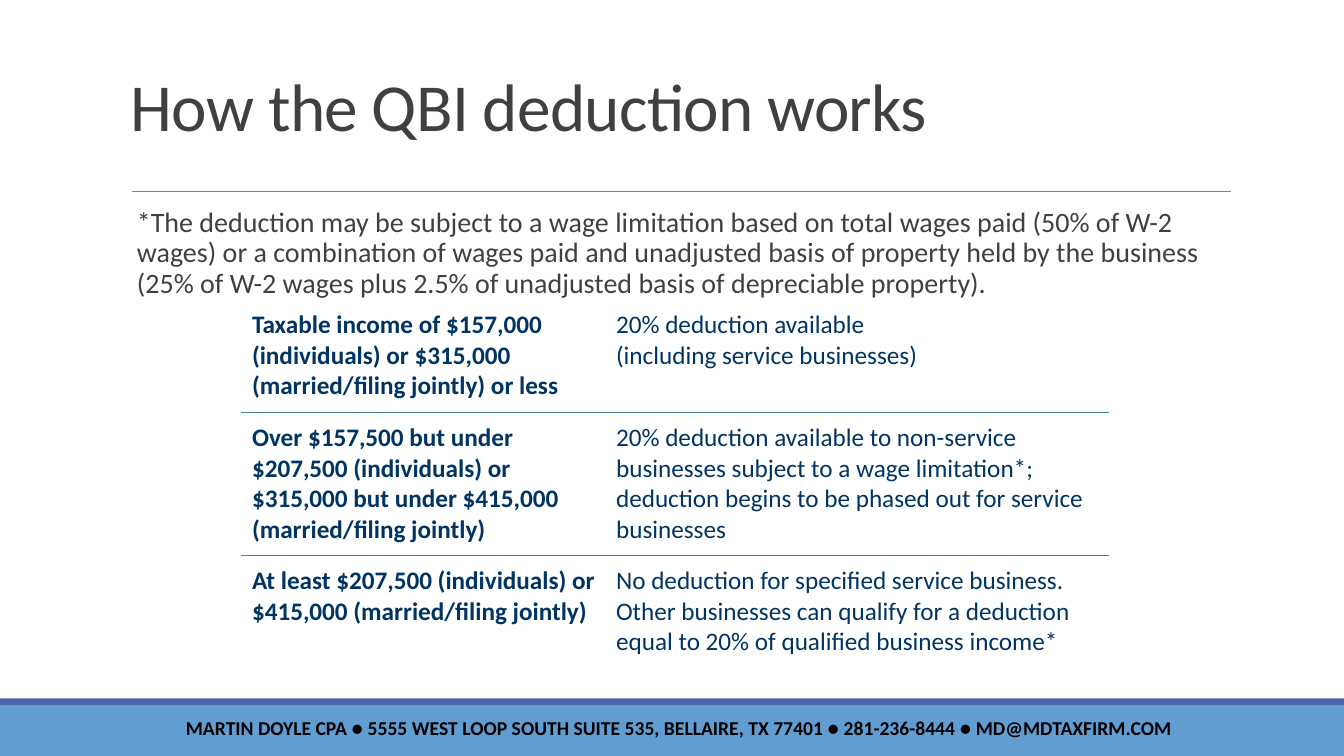
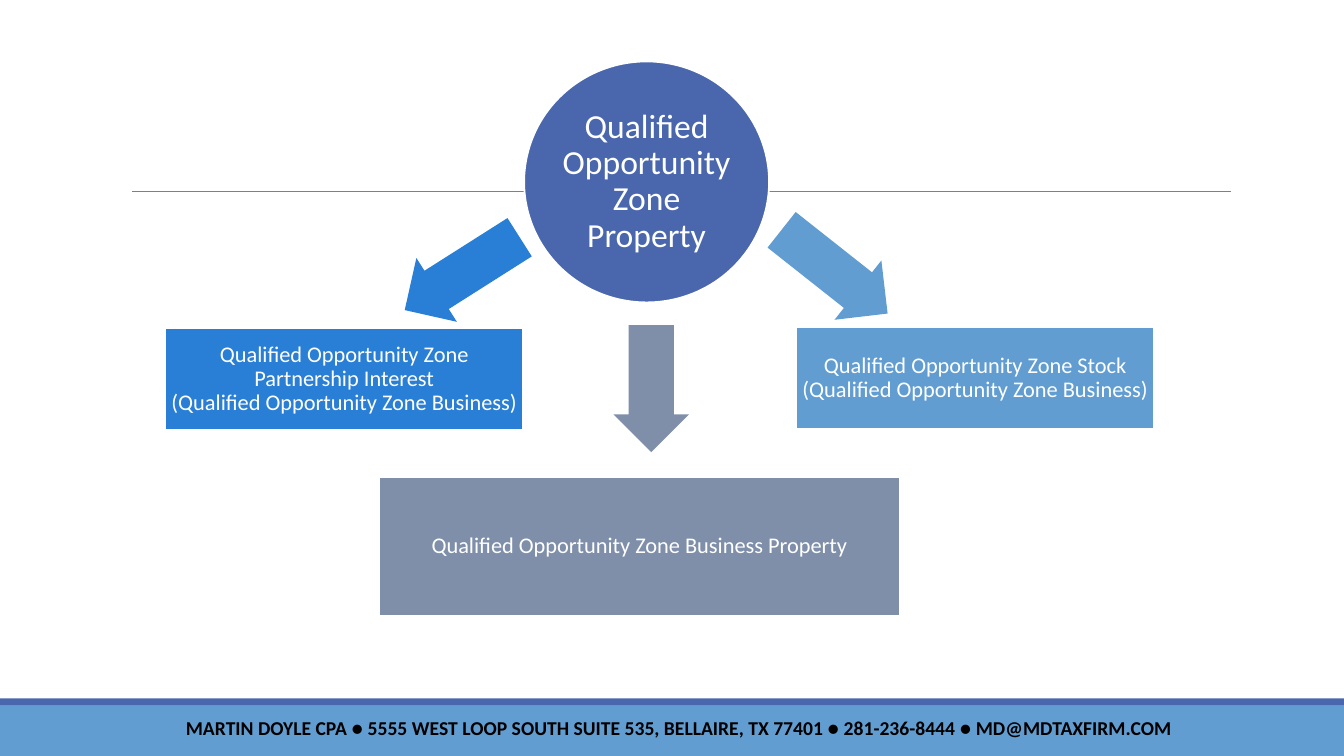
from dataclasses import dataclass

from lxml import etree
from pptx import Presentation
from pptx.dml.color import RGBColor
from pptx.enum import shapes, text
from pptx.oxml import ns
from pptx import util as u

FONT = "Calibri"
CELL = u.Inches(0.1)
COLUMNS, ROWS = 133.33, 75

WHITE = RGBColor(0xFF, 0xFF, 0xFF)
BLACK = RGBColor(0x00, 0x00, 0x00)
CHARCOAL = RGBColor(0x40, 0x40, 0x40)
GRAY = RGBColor(0x80, 0x80, 0x80)
NAVY = RGBColor(0x00, 0x34, 0x63)
TEAL = RGBColor(0x42, 0x86, 0x94)
INDIGO = RGBColor(0x4A, 0x66, 0xAC)
SKY = RGBColor(0x62, 0x9D, 0xD1)
BLUE = RGBColor(0x29, 0x7F, 0xD5)
SLATE = RGBColor(0x7F, 0x8F, 0xA9)

TITLE = "How the QBI deduction works"
NOTE = (
    "*The deduction may be subject to a wage limitation based on total wages paid "
    "(50% of W-2 wages) or a combination of wages paid and unadjusted basis of property "
    "held by the business (25% of W-2 wages plus 2.5% of unadjusted basis of depreciable property)."
)
FOOTER = (
    "MARTIN DOYLE CPA ● 5555 WEST LOOP SOUTH SUITE 535, BELLAIRE, TX 77401 "
    "● 281-236-8444 ● MD@MDTAXFIRM.COM"
)
BRACKETS = [
    (
        "Taxable income of $157,000 (individuals) or $315,000 (married/filing jointly) or less",
        "20% deduction available\n(including service businesses)",
    ),
    (
        "Over $157,500 but under $207,500 (individuals) or $315,000 but under $415,000 "
        "(married/filing jointly)",
        "20% deduction available to non-service businesses subject to a wage limitation*; "
        "deduction begins to be phased out for service businesses",
    ),
    (
        "At least $207,500 (individuals) or $415,000 (married/filing jointly)",
        "No deduction for specified service business. Other businesses can qualify for a "
        "deduction equal to 20% of qualified business income*",
    ),
]
NODES = [
    ("Qualified Opportunity Zone Stock\n(Qualified Opportunity Zone Business)",
     SKY, (62.6, 26.4, 35.5, 10.1), (59.7, 17.1, 13.4, 7.5), 218.3),
    ("Qualified Opportunity Zone Partnership Interest\n(Qualified Opportunity Zone Business)",
     BLUE, (0, 26.5, 35.5, 10.1), (22.7, 17.3, 13.5, 7.5), 327.6),
    ("Qualified Opportunity Zone Business Property",
     SLATE, (21.2, 41.2, 51.7, 13.8), (41.9, 28.7, 12.6, 7.5), 270),
]


@dataclass
class Box:
    """A rectangle measured in grid cells."""

    left: float
    top: float
    width: float
    height: float

    def inner(self, left, top, width, height):
        """Return a box placed relative to this one."""
        return Box(self.left + left, self.top + top, width, height)

    def place(self):
        """Return left, top, width and height as lengths."""
        return [u.Emu(round(side * CELL))
                for side in (self.left, self.top, self.width, self.height)]


def write(frame, words, size, color, bold=False, align=text.PP_ALIGN.LEFT,
          anchor=text.MSO_ANCHOR.TOP, inset=None, leading=None, tracking=None, indent=0):
    """Fill a text frame with one formatted paragraph for each line."""
    frame.word_wrap = True
    frame.vertical_anchor = anchor
    if inset is not None:
        frame.margin_left = frame.margin_right = u.Inches(inset)
        frame.margin_top = frame.margin_bottom = u.Inches(inset)
    for number, line in enumerate(words.split("\n")):
        para = frame.add_paragraph() if number else frame.paragraphs[0]
        para.alignment = align
        if leading:
            para.line_spacing = leading
        if indent:
            para._p.get_or_add_pPr().set("marL", str(u.Inches(indent)))
        span = para.add_run()
        span.text = line
        span.font.name = FONT
        span.font.size = u.Pt(size)
        span.font.bold = bold
        span.font.color.rgb = color
        if tracking:
            span._r.get_or_add_rPr().set("spc", str(round(tracking * 100)))


def add_text(page, box, words, **style):
    """Add a text box."""
    write(page.shapes.add_textbox(*box.place()).text_frame, words, **style)


def add_block(page, kind, box, fill, outline=None):
    """Add a flat filled shape, with an outline if a colour is given."""
    block = page.shapes.add_shape(kind, *box.place())
    block.shadow.inherit = False
    block.fill.solid()
    block.fill.fore_color.rgb = fill
    if outline is None:
        block.line.fill.background()
    else:
        block.line.color.rgb = outline
        block.line.width = u.Pt(1.25)
    return block


def add_rule(page, box):
    """Draw a thin horizontal rule along the top of the box."""
    left, top, width, _ = box.place()
    rule = page.shapes.add_connector(shapes.MSO_CONNECTOR.STRAIGHT, left, top, left + width, top)
    rule.line.color.rgb = GRAY
    rule.line.width = u.Pt(0.5)
    etree.SubElement(rule._element.spPr, ns.qn("a:effectLst"))


def add_footer(page, box):
    """Draw the contact band with its stripe."""
    rectangle = shapes.MSO_SHAPE.RECTANGLE
    add_block(page, rectangle, box.inner(0, 0.7, box.width, box.height - 0.7), SKY)
    add_block(page, rectangle, box.inner(0, 0, box.width, 0.7), INDIGO)
    add_text(page, box.inner(9.2, 0.5, 116.4, 4.7), FOOTER, size=14, color=BLACK, bold=True,
             align=text.PP_ALIGN.CENTER, anchor=text.MSO_ANCHOR.MIDDLE)


def add_page(deck):
    """Add a blank page with the shared rule and footer."""
    page = deck.slides.add_slide(deck.slide_layouts[6])
    add_rule(page, Box(13.1, 19, 109, 0))
    add_footer(page, Box(0, 69.3, COLUMNS, 5.7))
    return page


def add_border(cell, side):
    """Draw a teal line on one side of a cell."""
    border = etree.Element(ns.qn("a:" + side), w=str(u.Pt(1)))
    fill = etree.SubElement(border, ns.qn("a:solidFill"))
    etree.SubElement(fill, ns.qn("a:srgbClr"), val=str(TEAL))
    properties = cell._tc.get_or_add_tcPr()
    position = sum(child.tag.startswith(ns.qn("a:ln")) for child in properties)
    properties.insert(position, border)


def add_brackets(page, box):
    """Add the table of income brackets and deductions."""
    table = page.shapes.add_table(len(BRACKETS), 2, *box.place()).table
    table.first_row = table.horz_banding = False
    for column, share in zip(table.columns, (0.42, 0.58)):
        column.width = u.Emu(round(box.width * share * CELL))
    for row, height in zip(table.rows, (11.2, 14.2, 11.2)):
        row.height = u.Emu(round(height * CELL))
    for row, words in enumerate(BRACKETS):
        for column, entry in enumerate(words):
            cell = table.cell(row, column)
            cell.fill.background()
            cell.margin_left = cell.margin_right = u.Inches(0.1)
            cell.margin_top = cell.margin_bottom = u.Inches(0.1)
            write(cell.text_frame, entry, size=18, color=NAVY, bold=column == 0)
            if row > 0:
                add_border(cell, "lnT")
            if row < len(BRACKETS) - 1:
                add_border(cell, "lnB")


def add_node(page, kind, box, words, fill, size, inset):
    """Add a labelled shape of the diagram."""
    node = add_block(page, kind, box, fill, outline=WHITE)
    write(node.text_frame, words, size=size, color=WHITE, inset=inset, leading=0.9,
          align=text.PP_ALIGN.CENTER, anchor=text.MSO_ANCHOR.MIDDLE)


def add_diagram(page, box):
    """Draw the hub with an arrow to each kind of property."""
    add_node(page, shapes.MSO_SHAPE.OVAL, box.inner(35.6, 0, 24.3, 23.9),
             "Qualified Opportunity Zone Property", INDIGO, size=24, inset=0.02)
    for words, color, node_cells, arrow_cells, angle in NODES:
        arrow = add_block(page, shapes.MSO_SHAPE.LEFT_ARROW, box.inner(*arrow_cells), color)
        arrow.rotation = angle
        arrow.adjustments[0] = 0.6
        arrow.adjustments[1] = 0.5
        add_node(page, shapes.MSO_SHAPE.RECTANGLE, box.inner(*node_cells), words, color,
                 size=16, inset=0.03)


def add_deduction_page(deck):
    """Build the page on the deduction."""
    page = add_page(deck)
    body = Box(12, 3.1, 110, 63)
    add_text(page, body.inner(0, 0, body.width, 15.9), TITLE, size=48, color=CHARCOAL,
             anchor=text.MSO_ANCHOR.MIDDLE, leading=0.85, tracking=-0.5)
    add_text(page, body.inner(0, 17.1, body.width, 10), NOTE, size=20, color=CHARCOAL,
             leading=0.9, indent=0.06)
    add_brackets(page, body.inner(12, 26.6, 86, 36.6))


def add_property_page(deck):
    """Build the page on zone property."""
    add_diagram(add_page(deck), Box(16.4, 6.1, 98.1, 55))


def main():
    """Build and save the deck."""
    deck = Presentation()
    deck.slide_width = u.Emu(round(COLUMNS * CELL))
    deck.slide_height = u.Emu(round(ROWS * CELL))
    add_deduction_page(deck)
    add_property_page(deck)
    deck.save("out.pptx")


if __name__ == "__main__":
    main()
